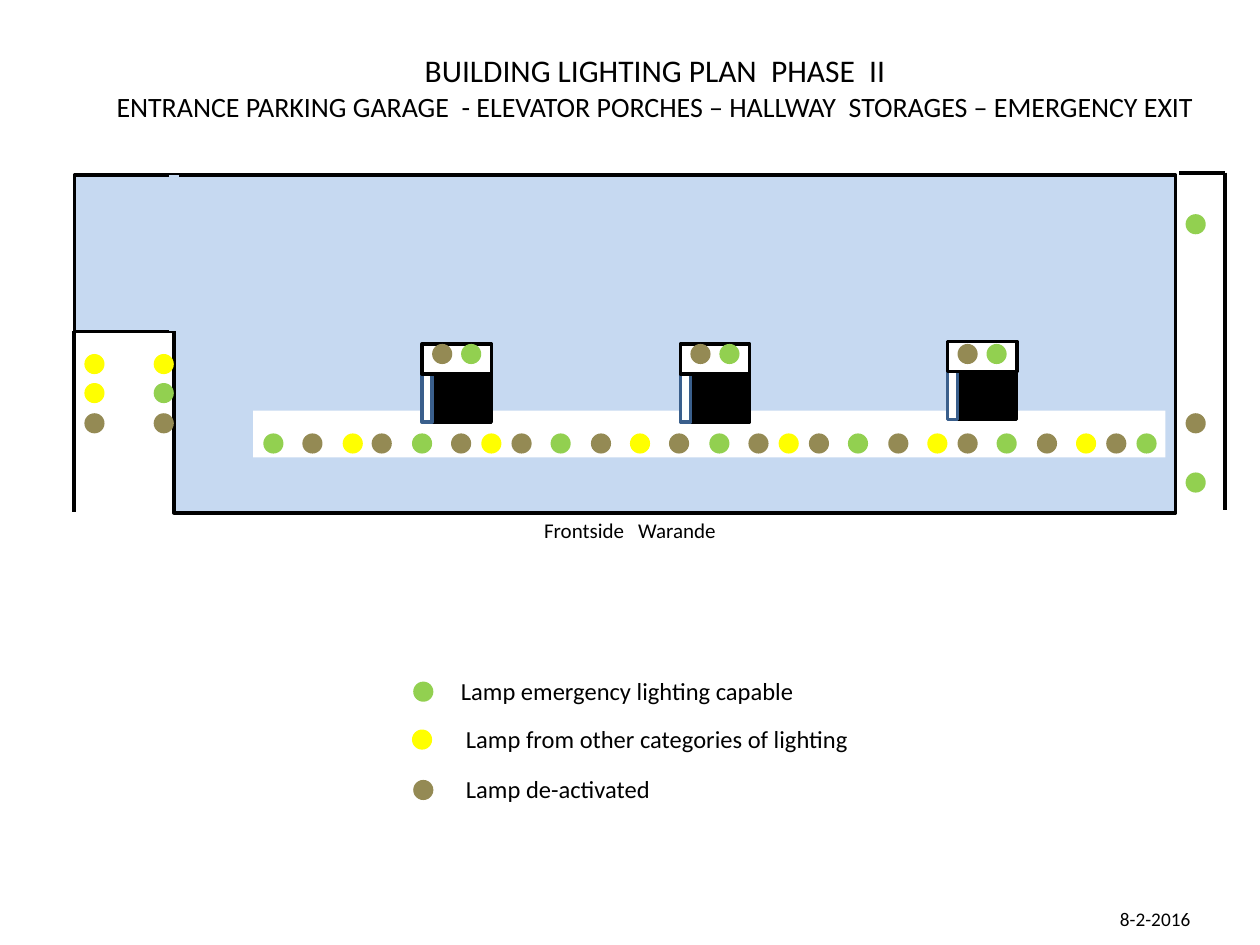
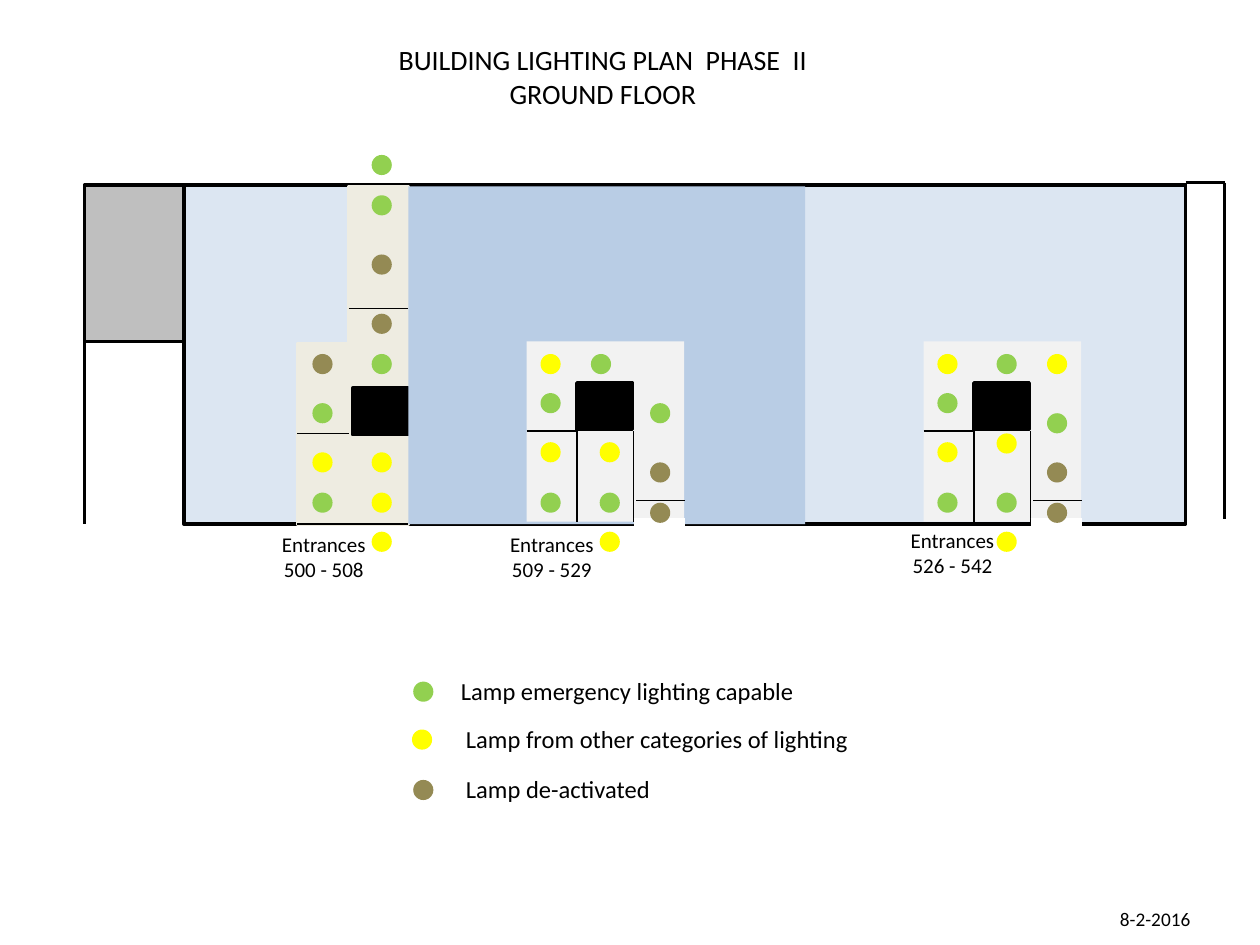
import itertools

import lxml.etree
import pptx
import pptx.dml.color
import pptx.enum.shapes
import pptx.enum.text
import pptx.oxml.ns
import pptx.util
from pptx.util import Inches

COLORS = {
    "black": "000000",
    "white": "FFFFFF",
    "garage": "C6D9F1",
    "door": "3A5F8C",
    "ground": "DCE6F2",
    "middle": "B9CDE5",
    "beige": "EEECE1",
    "entrance": "F2F2F2",
    "annex": "BFBFBF",
    "emergency": "92D050",
    "other": "FFFF00",
    "off": "948A54",
}
LAMP_COLORS = {"G": "emergency", "Y": "other", "D": "off"}
LAMP_SIZE = 0.16
FONT = "Calibri"
TITLE = "BUILDING LIGHTING PLAN  PHASE  II"
SLIDE_BOX = (0, 0)
LEGEND_BOX = (3.27, 5.32)
DATE_BOX = (8.79, 7.15)
CENTER = pptx.enum.text.PP_ALIGN.CENTER
LEFT = pptx.enum.text.PP_ALIGN.LEFT


def rgb(name):
    return pptx.dml.color.RGBColor.from_string(COLORS[name])


def add_block(slide, box, left, top, width, height, fill, line=None, kind="RECTANGLE"):
    shape = slide.shapes.add_shape(
        getattr(pptx.enum.shapes.MSO_SHAPE, kind),
        Inches(box[0] + left), Inches(box[1] + top), Inches(width), Inches(height),
    )
    shape.shadow.inherit = False
    shape.fill.solid()
    shape.fill.fore_color.rgb = rgb(fill)
    if line:
        shape.line.color.rgb = rgb(line)
        shape.line.width = pptx.util.Pt(2)
    else:
        shape.line.fill.background()


def add_wall(slide, box, start, end, width=0.75, color="black"):
    connector = slide.shapes.add_connector(
        pptx.enum.shapes.MSO_CONNECTOR.STRAIGHT,
        Inches(box[0] + start[0]), Inches(box[1] + start[1]),
        Inches(box[0] + end[0]), Inches(box[1] + end[1]),
    )
    connector.line.color.rgb = rgb(color)
    connector.line.width = pptx.util.Pt(width)
    properties = connector.element.find(pptx.oxml.ns.qn("p:spPr"))
    lxml.etree.SubElement(properties, pptx.oxml.ns.qn("a:effectLst"))


def add_lamps(slide, box, lamps):
    for kind, left, top in lamps:
        add_block(slide, box, left, top, LAMP_SIZE, LAMP_SIZE, LAMP_COLORS[kind], kind="OVAL")


def add_text(slide, box, left, top, width, height, lines, sizes, align=LEFT):
    text_box = slide.shapes.add_textbox(
        Inches(box[0] + left), Inches(box[1] + top), Inches(width), Inches(height)
    )
    text_frame = text_box.text_frame
    text_frame.word_wrap = True
    text_frame.text = "\n".join(lines)
    for paragraph, size in zip(text_frame.paragraphs, sizes):
        paragraph.alignment = align
        for run in paragraph.runs:
            run.font.name = FONT
            run.font.size = pptx.util.Pt(size)
            run.font.color.rgb = rgb("black")


def add_legend(slide, box):
    entries = [
        ("G", 0.01, 0.09, "Lamp emergency lighting capable", 0.29, 0),
        ("Y", 0, 0.47, "Lamp from other categories of lighting", 0.33, 0.38),
        ("D", 0.01, 0.87, "Lamp de-activated", 0.33, 0.77),
    ]
    for kind, lamp_left, lamp_top, label, label_left, label_top in entries:
        add_lamps(slide, box, [(kind, lamp_left, lamp_top)])
        add_text(slide, box, label_left, label_top, 3.36, 0.34, [label], [14])


def add_plan_slide(presentation, title_area, subtitle, title_sizes):
    slide = presentation.slides.add_slide(presentation.slide_layouts[6])
    add_text(slide, SLIDE_BOX, *title_area, [TITLE, subtitle], title_sizes, CENTER)
    add_legend(slide, LEGEND_BOX)
    add_text(slide, DATE_BOX, 0, 0, 1.2, 0.29, ["8-2-2016"], [11])
    return slide


def add_garage(slide, box):
    add_block(slide, box, 0.79, 0, 7.95, 2.68, "garage", "black")
    add_block(slide, box, 1.42, 1.87, 7.24, 0.37, "white")
    add_block(slide, box, 0, 0, 0.79, 1.24, "garage", "black")
    add_wall(slide, box, (8.77, -0.02), (9.13, -0.02), 2.25)
    add_wall(slide, box, (9.13, -0.02), (9.13, 2.66), 2.25)
    add_wall(slide, box, (0, 1.24), (0, 2.67), 2.25)
    add_wall(slide, box, (0.79, 0), (0.79, 1.24), 6, "garage")
    add_text(slide, box, 3.63, 2.67, 2.28, 0.3, ["Frontside   Warande"], [12])
    driveway = zip(("YY", "YG", "DD"), (1.42, 1.65, 1.89))
    for kinds, top in driveway:
        add_lamps(slide, box, [(kinds[0], 0.08, top), (kinds[1], 0.63, top)])
    add_lamps(slide, box, [("G", 8.82, 0.31), ("D", 8.82, 1.89), ("G", 8.82, 2.36)])


def add_elevator(slide, box, lamp_top):
    add_block(slide, box, 0.08, 0.23, 0.47, 0.39, "black", "black")
    add_block(slide, box, 0, 0.23, 0.08, 0.39, "white", "door")
    add_block(slide, box, 0, 0, 0.55, 0.24, "white", "black")
    add_lamps(slide, box, [("D", 0.08, lamp_top), ("G", 0.31, lamp_top)])


def add_hallway_lamps(slide, box):
    lefts = [
        0, 0.31, 0.63, 0.86, 1.18, 1.49, 1.73, 1.97, 2.28, 2.6, 2.91, 3.22, 3.54,
        3.85, 4.09, 4.33, 4.64, 4.96, 5.27, 5.51, 5.82, 6.14, 6.45, 6.69, 6.93,
    ]
    add_lamps(slide, box, [(kind, left, 0) for kind, left in zip(itertools.cycle("GDYD"), lefts)])


def add_ground_floor(slide, box):
    add_block(slide, box, 0.79, 0, 7.95, 2.69, "ground", "black")
    add_left_entrance(slide, (box[0] + 1.69, box[1] + 0.01))
    add_block(slide, box, 2.57, 0.01, 3.15, 2.68, "middle")
    add_block(slide, box, 0, 0, 0.79, 1.24, "annex", "black")
    add_wall(slide, box, (0, 1.24), (0, 2.69), 1.5)
    add_wall(slide, box, (8.74, -0.02), (9.05, -0.02), 1.5)
    add_wall(slide, box, (9.05, -0.02), (9.05, 2.65), 1.5)


def add_left_entrance(slide, box):
    add_block(slide, box, 0, 1.25, 0.88, 1.43, "beige", "beige")
    add_block(slide, box, 0.41, 0, 0.47, 1.24, "beige", "beige")
    add_block(slide, box, 0.44, 1.6, 0.44, 0.37, "black", "black")
    for left, right, top in [(0, 0.41, 1.96), (0.41, 0.88, 0.97), (0, 0.88, 2.68)]:
        add_wall(slide, box, (left, top), (right, top))
    corridor = zip("GGDDGYYY", (-0.25, 0.07, 0.54, 1.01, 1.33, 2.11, 2.43, 2.74))
    add_lamps(slide, box, [(kind, 0.59, top) for kind, top in corridor])
    side_room = zip("DGYG", (1.33, 1.72, 2.11, 2.43))
    add_lamps(slide, box, [(kind, 0.12, top) for kind, top in side_room])


def add_entrance(slide, box, extra_lamps):
    add_block(slide, box, 0, 0, 1.25, 1.43, "entrance")
    add_block(slide, box, 0.4, 0.33, 0.44, 0.37, "black", "black")
    for left in (0.4, 0.85):
        add_wall(slide, box, (left, 0.71), (left, 1.43))
    add_wall(slide, box, (0.87, 1.26), (1.26, 1.26))
    add_wall(slide, box, (0, 0.71), (0.4, 0.71))
    add_wall(slide, box, (0.85, 1.43), (1.26, 1.43), 4.5, "white")
    shared_lamps = [
        ("Y", 0.11, 0.1), ("G", 0.11, 0.41), ("Y", 0.11, 0.8), ("G", 0.11, 1.2),
        ("G", 0.58, 1.2), ("Y", 0.58, 1.51), ("D", 0.98, 0.96), ("D", 0.98, 1.28),
    ]
    add_lamps(slide, box, shared_lamps + extra_lamps)


def add_entrance_label(slide, box, numbers):
    add_text(slide, box, 0, 0, 1.66, 0.5, ["Entrances", numbers], [12, 12], CENTER)


def build_garage_slide(presentation):
    subtitle = "ENTRANCE PARKING GARAGE  - ELEVATOR PORCHES – HALLWAY  STORAGES – EMERGENCY EXIT"
    slide = add_plan_slide(presentation, (0.75, 0.36, 8.9, 0.67), subtitle, [18, 16])
    add_garage(slide, (0.59, 1.39))
    for left, top, lamp_top in [(3.35, 2.73, 0), (5.4, 2.73, 0), (7.52, 2.71, 0.02)]:
        add_elevator(slide, (left, top), lamp_top)
    add_hallway_lamps(slide, (2.09, 3.44))


def build_ground_floor_slide(presentation):
    slide = add_plan_slide(presentation, (2.21, 0.29, 5.15, 0.64), "GROUND FLOOR", [16, 16])
    add_ground_floor(slide, (0.67, 1.47))
    add_entrance(slide, (4.18, 2.71), [("G", 0.51, 0.1), ("G", 0.98, 0.49), ("Y", 0.58, 0.8)])
    add_entrance(
        slide, (7.33, 2.71),
        [("G", 0.58, 0.1), ("Y", 0.98, 0.1), ("G", 0.98, 0.57), ("Y", 0.58, 0.73)],
    )
    add_entrance_label(slide, (1.74, 4.17), "500 - 508")
    add_entrance_label(slide, (3.55, 4.17), "509 - 529")
    add_entrance_label(slide, (6.73, 4.14), "526 - 542")


def main():
    presentation = pptx.Presentation()
    presentation.slide_width = Inches(10)
    presentation.slide_height = Inches(7.5)
    build_garage_slide(presentation)
    build_ground_floor_slide(presentation)
    presentation.save("out.pptx")


if __name__ == "__main__":
    main()
